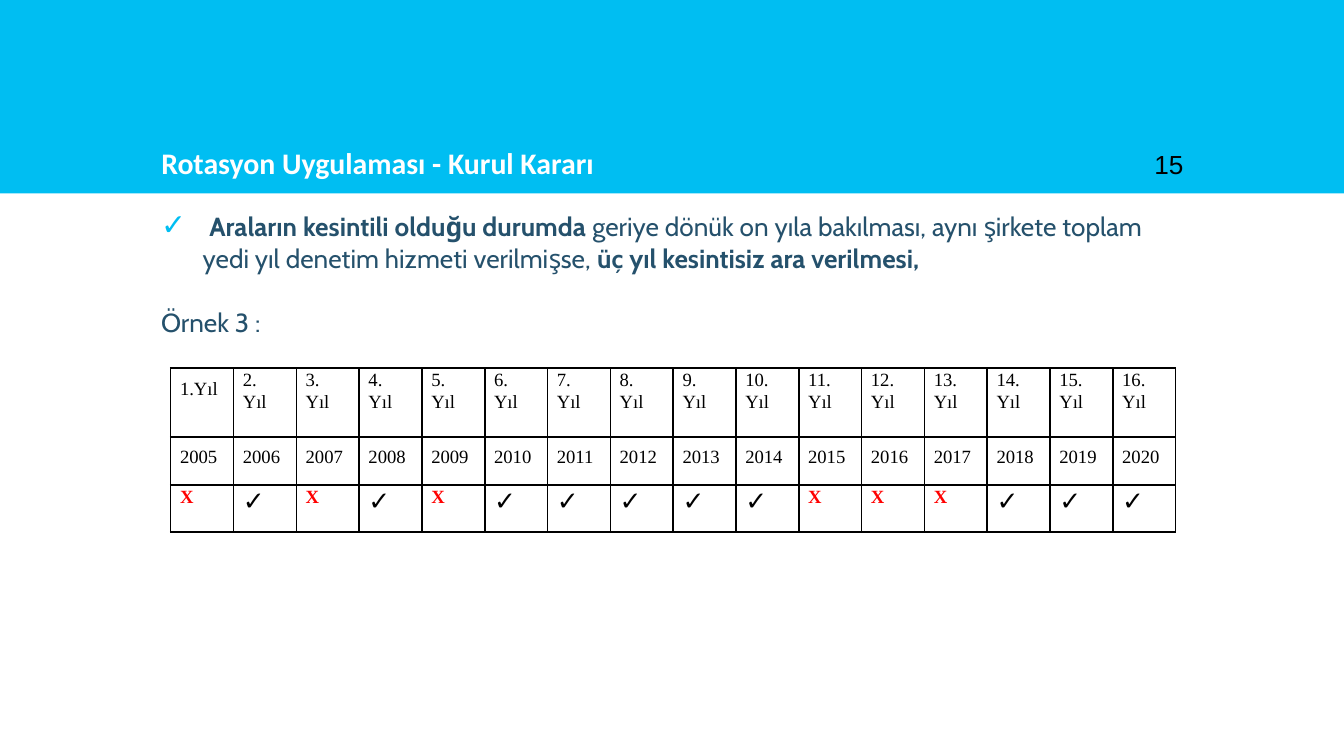
from lxml.etree import SubElement
from pptx import Presentation
from pptx.dml.color import RGBColor
from pptx.enum.shapes import MSO_SHAPE
from pptx.enum.text import MSO_ANCHOR, MSO_AUTO_SIZE, PP_ALIGN
from pptx.oxml.ns import qn
from pptx.util import Inches, Pt

CYAN = RGBColor(0x00, 0xBE, 0xF2)
NAVY = RGBColor(0x25, 0x51, 0x6C)
WHITE = RGBColor(0xFF, 0xFF, 0xFF)
BLACK = RGBColor(0, 0, 0)
RED = RGBColor(0xFF, 0, 0)

FIRST_YEAR = 2005
YEAR_COUNT = 16
UNAUDITED_YEARS = {2005, 2007, 2009, 2015, 2016, 2017}


class SlideBuilder:
    def __init__(self, page):
        self.page = page
        self.heading_font = "Calibri"
        self.body_font = "Cabin"
        self.number_font = "Arial"
        self.table_font = "Times New Roman"

    def add_span(self, para, text, font, size, color, bold=False):
        span = para.add_run()
        span.text = text
        span.font.name = font
        span.font.size = Pt(size)
        span.font.bold = bold
        span.font.color.rgb = color

    def set_frame(self, frame, anchor):
        frame.word_wrap = True
        frame.auto_size = MSO_AUTO_SIZE.NONE
        frame.vertical_anchor = anchor
        frame.margin_left = frame.margin_right = Inches(0.1)
        frame.margin_top = frame.margin_bottom = Inches(0.1)

    def add_banner(self, width, height):
        banner = self.page.shapes.add_shape(MSO_SHAPE.RECTANGLE, 0, 0, width, height)
        banner.shadow.inherit = False
        banner.fill.solid()
        banner.fill.fore_color.rgb = CYAN
        banner.line.fill.background()
        # The banner must lie behind the title placeholder.
        self.page.shapes.title._element.addprevious(banner._element)

    def set_title(self, text, left, top, width, height):
        title = self.page.shapes.title
        title.left, title.top, title.width, title.height = left, top, width, height
        self.set_frame(title.text_frame, MSO_ANCHOR.BOTTOM)
        para = title.text_frame.paragraphs[0]
        para.alignment = PP_ALIGN.LEFT
        self.add_span(para, text, self.heading_font, 16, WHITE, True)

    def add_box(self, left, top, width, height, anchor=MSO_ANCHOR.TOP):
        frame = self.page.shapes.add_textbox(left, top, width, height).text_frame
        self.set_frame(frame, anchor)
        return frame

    def add_bullet(self, para, mark):
        properties = para._p.get_or_add_pPr()
        properties.set("marL", str(Inches(0.31)))
        properties.set("indent", str(-Inches(0.31)))
        color = SubElement(properties, qn("a:buClr"))
        SubElement(color, qn("a:srgbClr"), val=str(CYAN))
        SubElement(properties, qn("a:buFont"), typeface=self.number_font)
        SubElement(properties, qn("a:buChar"), char=mark)

    def add_grid(self, left, top, width, row_heights, column_count):
        height = sum(row_heights)
        grid = self.page.shapes.add_table(
            len(row_heights), column_count, left, top, width, height).table
        grid.first_row = grid.horz_banding = False
        for column in grid.columns:
            column.width = width // column_count
        for row, row_height in zip(grid.rows, row_heights):
            row.height = row_height
        for cell in grid.iter_cells():
            self.style_cell(cell)
        return grid

    def style_cell(self, cell):
        cell.margin_left = cell.margin_right = Inches(0.07)
        cell.margin_top = cell.margin_bottom = 0
        properties = cell._tc.get_or_add_tcPr()
        for side in ("a:lnL", "a:lnR", "a:lnT", "a:lnB"):
            line = SubElement(properties, qn(side), w=str(Pt(1)))
            fill = SubElement(line, qn("a:solidFill"))
            SubElement(fill, qn("a:srgbClr"), val=str(BLACK))
        cell.fill.background()

    def write_label(self, cell, text):
        """Write a justified label with wide line spacing."""
        para = cell.text_frame.paragraphs[0]
        para.alignment = PP_ALIGN.JUSTIFY
        para.line_spacing = 1.5
        para.space_after = Pt(6)
        self.add_span(para, text, self.table_font, 10, BLACK)

    def write_lines(self, cell, lines, font, size, color, bold=False):
        frame = cell.text_frame
        for index, text in enumerate(lines):
            para = frame.add_paragraph() if index else frame.paragraphs[0]
            para.line_spacing = 1.07
            self.add_span(para, text, font, size, color, bold)

    def fill_year(self, grid, column):
        year = FIRST_YEAR + column
        ordinal, year_cell, mark = (grid.cell(row, column) for row in range(3))
        if column == 0:
            self.write_label(ordinal, "1.Yıl")
        else:
            lines = ["15. Yıl"] if column == 14 else [f"{column + 1}.", "Yıl"]
            self.write_lines(ordinal, lines, self.table_font, 10, BLACK)
        self.write_label(year_cell, str(year))
        if year in UNAUDITED_YEARS:
            self.write_lines(mark, ["X"], self.table_font, 10, RED, True)
        else:
            self.write_lines(mark, ["✓"], self.number_font, 14, BLACK)


def main():
    deck = Presentation()
    deck.slide_width = Inches(10)
    deck.slide_height = deck.slide_width * 9 // 16
    page = deck.slides.add_slide(deck.slide_layouts[5])
    builder = SlideBuilder(page)

    builder.add_banner(deck.slide_width, Inches(1.44))
    builder.set_title("Rotasyon Uygulaması - Kurul Kararı",
                      Inches(1.1), Inches(0.71), Inches(7.8), Inches(0.73))

    body = builder.add_box(Inches(1.1), Inches(1.44), Inches(7.8), Inches(3.43))
    rule = body.paragraphs[0]
    builder.add_bullet(rule, "✓")
    for text, size, bold in (
        (" ", 16, True),
        ("Araların kesintili olduğu durumda ", 14, True),
        ("geriye dönük on yıla bakılması, aynı şirkete toplam yedi yıl "
         "denetim hizmeti verilmişse, ", 14, False),
        ("üç yıl kesintisiz ara verilmesi,", 14, True),
    ):
        builder.add_span(rule, text, builder.body_font, size, NAVY, bold)
    example = body.add_paragraph()
    example.space_before = Pt(17)
    builder.add_span(example, "Örnek 3 :", builder.body_font, 14, NAVY)

    number = builder.add_box(Inches(8.49), Inches(0.71), Inches(0.6), Inches(0.73),
                             MSO_ANCHOR.BOTTOM)
    builder.add_span(number.paragraphs[0], "15", builder.number_font, 14, BLACK)

    grid = builder.add_grid(Inches(1.27), Inches(2.74), Inches(7.48),
                            [Inches(0.51), Inches(0.36), Inches(0.35)], YEAR_COUNT)
    for column in range(YEAR_COUNT):
        builder.fill_year(grid, column)

    deck.save("out.pptx")


if __name__ == "__main__":
    main()
